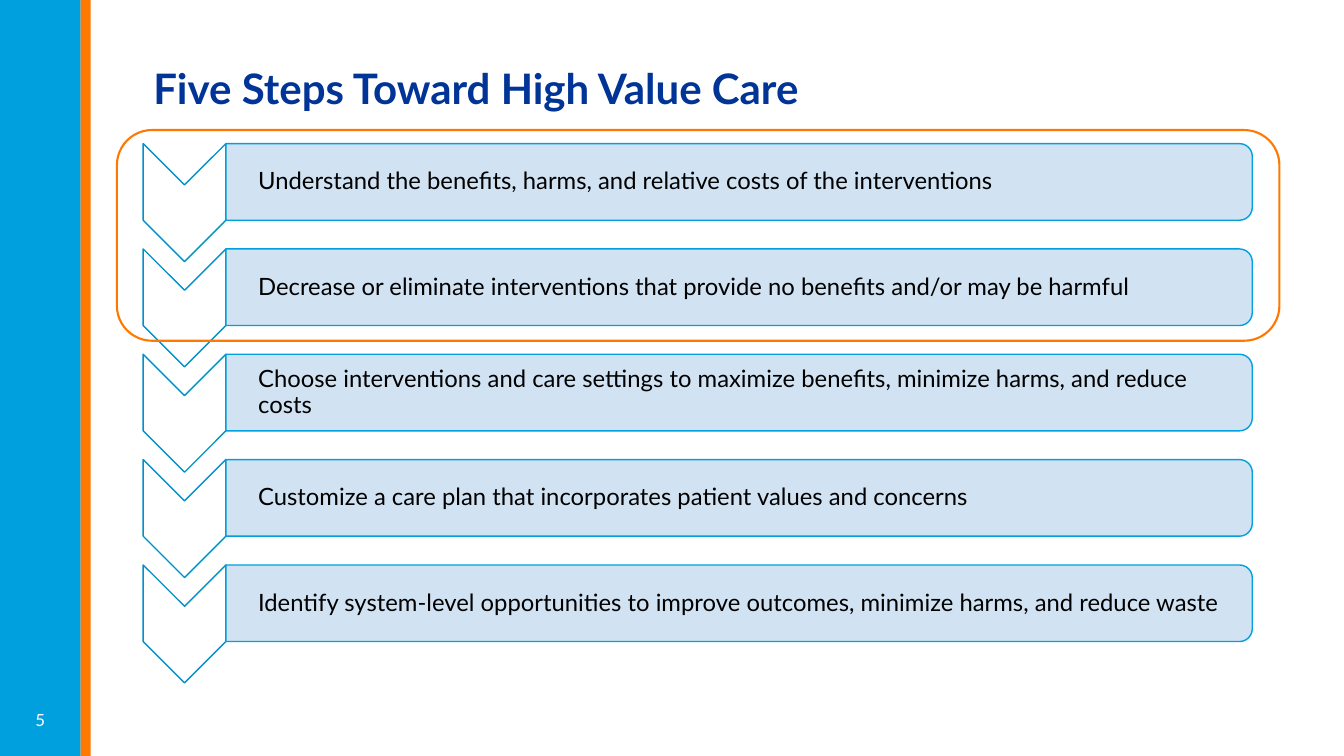
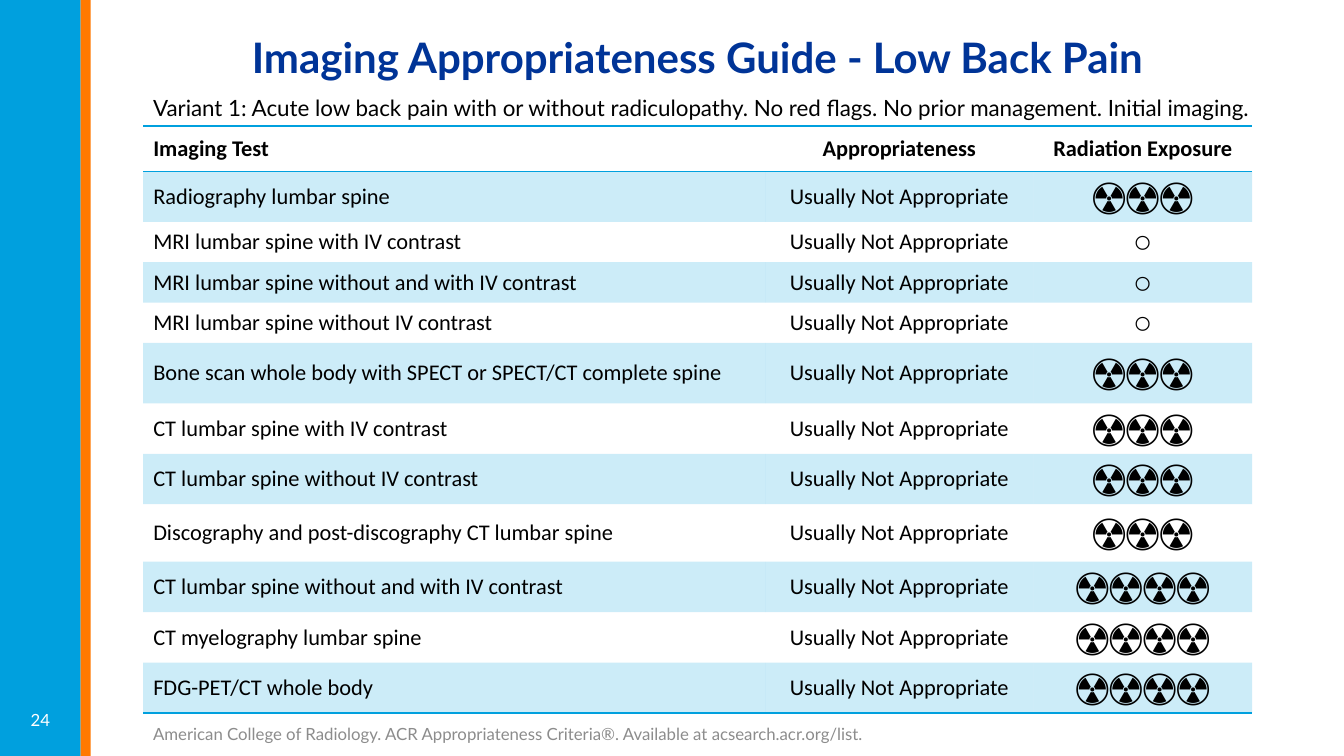
from lxml import etree
from pptx import Presentation
from pptx import util as u
from pptx.dml.color import RGBColor
from pptx.enum import shapes, text
from pptx.oxml.ns import qn

PX = 4572  # EMU in one px, 200 px to the inch
BLUE, ORANGE, NAVY, WHITE = "00A0DE", "FF7900", "003497", "FFFFFF"
LEFT, CENTER = text.PP_ALIGN.LEFT, text.PP_ALIGN.CENTER
MIDDLE, BOTTOM = text.MSO_ANCHOR.MIDDLE, text.MSO_ANCHOR.BOTTOM
KIND = shapes.MSO_SHAPE


def paint(fill, colour, opacity=100):
    """Fill with a hex colour at an opacity in percent."""
    fill.solid()
    fill.fore_color.rgb = RGBColor.from_string(colour)
    if opacity < 100:
        srgb = fill._xPr.find(".//" + qn("a:srgbClr"))
        etree.SubElement(srgb, qn("a:alpha"), val=str(opacity * 1000))


def write(frame, words, size, colour="000000", align=LEFT, anchor=MIDDLE, **font_format):
    """Put one formatted paragraph in a text frame and return it."""
    frame.text = words
    frame.word_wrap = True
    frame.vertical_anchor = anchor
    paragraph = frame.paragraphs[0]
    paragraph.alignment = align
    font = paragraph.runs[0].font
    font.color.rgb = RGBColor.from_string(colour)
    for name, value in {"name": "Lato", "size": u.Pt(size), **font_format}.items():
        setattr(font, name, value)
    return paragraph


prs = Presentation()
prs.slide_width, prs.slide_height = 2666 * PX, 1500 * PX

# Shared frame: bands, title and slide number
bands = [(0, 160, BLUE), (160, 20, ORANGE)]
headings = [
    ("Five Steps Toward High Value Care", "5", 80, 200, LEFT, 0.9),
    ("Imaging Appropriateness Guide - Low Back Pain", "24", 52, 122, CENTER, 1.0),
]
for heading, number, top, height, align, spacing in headings:
    slide = prs.slides.add_slide(prs.slide_layouts[5])
    for left, width, colour in bands:
        band = slide.shapes.add_shape(KIND.RECTANGLE, left * PX, 0, width * PX, 1500 * PX)
        band.shadow.inherit = False
        paint(band.fill, colour)
        band.line.fill.background()
    title = slide.shapes.title
    title.left, title.top, title.width, title.height = 284 * PX, top * PX, 2200 * PX, height * PX
    title.text_frame.auto_size = text.MSO_AUTO_SIZE.NONE
    write(title.text_frame, heading, 30, NAVY, align, bold=True).line_spacing = spacing
    number_box = slide.shapes.add_textbox(0, 1398 * PX, 160 * PX, 60 * PX)
    write(number_box.text_frame, number, 12, WHITE, CENTER, BOTTOM)

steps_slide, criteria_slide = prs.slides

# Five steps: a chevron and a bar each, both turned a quarter to the right
steps = [
    "Understand the benefits, harms, and relative costs of the interventions",
    "Decrease or eliminate interventions that provide no benefits and/or may be harmful",
    "Choose interventions and care settings to maximize benefits, minimize harms, and reduce costs",
    "Customize a care plan that incorporates patient values and concerns",
    "Identify system-level opportunities to improve outcomes, minimize harms, and reduce waste",
]
step_parts = [
    (KIND.CHEVRON, 284, 164, 234, WHITE, 100, "0091C9"),
    (KIND.ROUND_2_SAME_RECTANGLE, 448, 2036, 152, "CCDFF2", 90, BLUE),
]
for row, step in enumerate(steps):
    top = 285 + row * 209
    for kind, left, width, height, colour, opacity, outline in step_parts:
        shift = (width - height) // 2
        part = steps_slide.shapes.add_shape(
            kind, (left + shift) * PX, (top - shift) * PX, height * PX, width * PX)
        part.rotation = 90
        part.shadow.inherit = False
        paint(part.fill, colour, opacity)
        paint(part.line.fill, outline)
        part.line.width = u.Pt(1)
    label = steps_slide.shapes.add_textbox(448 * PX, (top + 7) * PX, 2028 * PX, 138 * PX).text_frame
    write(label, step, 17).line_spacing = 0.9
    margins = {"margin_left": 64, "margin_right": 2, "margin_top": 2, "margin_bottom": 2}
    for side, margin in margins.items():
        setattr(label, side, margin * PX)

highlight = steps_slide.shapes.add_shape(
    KIND.ROUNDED_RECTANGLE, 232 * PX, 258 * PX, 2306 * PX, 418 * PX)
highlight.shadow.inherit = False
highlight.fill.background()
paint(highlight.line.fill, ORANGE)
highlight.line.width = u.Pt(1.5)

# Criteria table
captions = [
    ("Variant 1: Acute low back pain with or without radiculopathy. No red flags. "
     "No prior management. Initial imaging.", 176, 2266, 74, 16, "000000"),
    ("American College of Radiology. ACR Appropriateness Criteria®. "
     "Available at acsearch.acr.org/list.", 1426, 1500, 60, 12, "8C8C8C"),
]
for words, top, width, height, size, colour in captions:
    caption = criteria_slide.shapes.add_textbox(284 * PX, top * PX, width * PX, height * PX)
    write(caption.text_frame, words, size, colour)

tests = [
    ("Radiography lumbar spine", "☢☢☢", 100),
    ("MRI lumbar spine with IV contrast", "⚪", 80),
    ("MRI lumbar spine without and with IV contrast", "⚪", 80),
    ("MRI lumbar spine without IV contrast", "⚪", 80),
    ("Bone scan whole body with SPECT or SPECT/CT complete spine", "☢☢☢", 120),
    ("CT lumbar spine with IV contrast", "☢☢☢", 100),
    ("CT lumbar spine without IV contrast", "☢☢☢", 100),
    ("Discography and post-discography CT lumbar spine", "☢☢☢", 114),
    ("CT lumbar spine without and with IV contrast", "☢☢☢☢", 100),
    ("CT myelography lumbar spine", "☢☢☢☢", 100),
    ("FDG-PET/CT whole body", "☢☢☢☢", 100),
]
rows = [("Imaging Test", "Appropriateness", "Radiation Exposure", 90)]
rows += [(test, "Usually Not Appropriate", dose, height) for test, dose, height in tests]
symbol_sizes = {"☢": 24, "⚪": 18}
rules = {0: ("a:lnB", "a:lnT"), len(rows) - 1: ("a:lnB",)}

criteria = criteria_slide.shapes.add_table(
    len(rows), 3, 284 * PX, 250 * PX, 2200 * PX, sum(row[-1] for row in rows) * PX).table
criteria.horz_banding = False
# The style without fills and grid lines
criteria._tbl.tblPr.find(qn("a:tableStyleId")).text = "{2D5ABB26-0587-4C30-8999-92F81FD0307C}"
for column, width in zip(criteria.columns, (1234, 532, 434)):
    column.width = width * PX
for r, (*entries, height) in enumerate(rows):
    criteria.rows[r].height = height * PX
    for c, entry in enumerate(entries):
        cell = criteria.cell(r, c)
        cell.vertical_anchor = MIDDLE
        write(cell.text_frame, entry, symbol_sizes.get(entry[0], 16),
              align=CENTER if c else LEFT, name="Calibri", bold=r == 0)
        if r % 2:
            paint(cell.fill, BLUE, 20)
        else:
            cell.fill.background()
        for side in rules.get(r, ()):
            rule = etree.Element(qn(side), w=str(u.Pt(1)))
            rule_fill = etree.SubElement(rule, qn("a:solidFill"))
            etree.SubElement(rule_fill, qn("a:srgbClr"), val=BLUE)
            cell._tc.get_or_add_tcPr().insert(0, rule)

prs.save("out.pptx")
